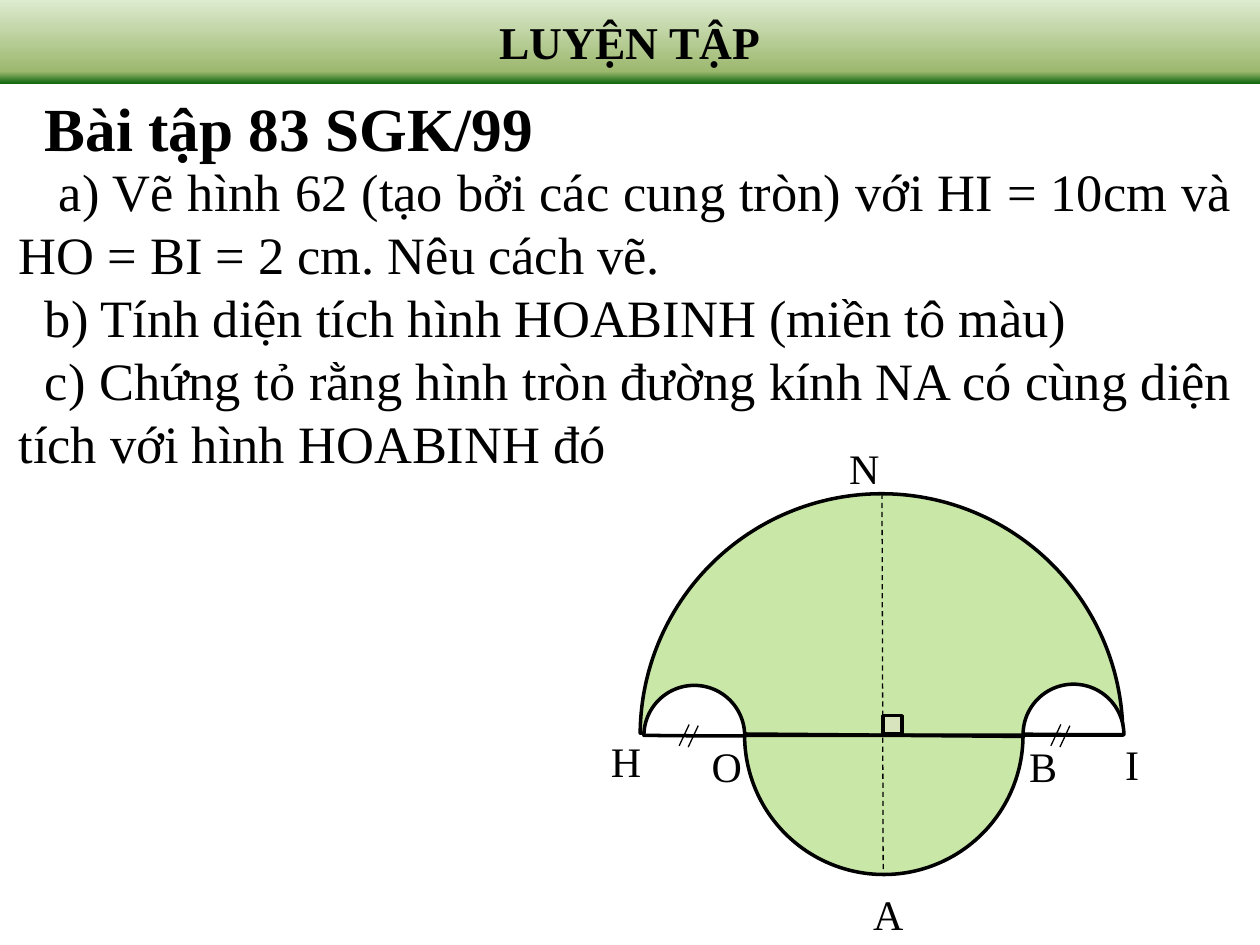
from copy import deepcopy
from dataclasses import dataclass

from pptx import Presentation
from pptx.dml.color import RGBColor
from pptx.enum.dml import MSO_LINE
from pptx.enum.shapes import MSO_CONNECTOR, MSO_SHAPE
from pptx.enum.text import MSO_ANCHOR, MSO_AUTO_SIZE, PP_ALIGN
from pptx.oxml.ns import qn
from pptx.oxml.xmlchemy import OxmlElement
from pptx.util import Pt

FONT = "Times New Roman"
BLACK, WHITE, GREEN, PALE = "000000", "FFFFFF", "C9E7A7", "D7E4BD"


@dataclass
class HalfDisc:
    left: float
    top: float
    size: float
    rotation: int
    fill: str


@dataclass
class Label:
    text: str
    left: float
    top: float


@dataclass
class Task:
    text: str
    indent: float


def color(value: str) -> RGBColor:
    return RGBColor.from_string(value)


def format_text(p, size: float, bold: bool = False, align=PP_ALIGN.LEFT,
                indent: float = 0) -> None:
    p.alignment = align
    if indent:
        p._p.get_or_add_pPr().set("indent", str(Pt(indent)))
    for r in p.runs:
        r.font.name, r.font.size, r.font.bold = FONT, Pt(size), bold
        r.font.color.rgb = color(BLACK)


def add_text(s, left: float, top: float, width: float, height: float,
             text: str, wrap: bool = True):
    tf = s.shapes.add_textbox(Pt(left), Pt(top), Pt(width), Pt(height)).text_frame
    tf.word_wrap = wrap
    tf.text = text
    return tf


def add_shape(s, kind, left: float, top: float, width: float, height: float,
              fill: str):
    sp = s.shapes.add_shape(kind, Pt(left), Pt(top), Pt(width), Pt(height))
    sp.shadow.inherit = False
    sp.fill.solid()
    sp.fill.fore_color.rgb = color(fill)
    sp.line.color.rgb = color(BLACK)
    sp.line.width = Pt(2)
    return sp


def add_half_disc(s, d: HalfDisc) -> None:
    sp = add_shape(s, MSO_SHAPE.PIE, d.left, d.top, d.size, d.size, d.fill)
    sp.adjustments[0], sp.adjustments[1] = 54.276, 162
    sp.rotation = d.rotation


def add_line(s, x1: float, y1: float, x2: float, y2: float, dash=None) -> None:
    line = s.shapes.add_connector(MSO_CONNECTOR.STRAIGHT, Pt(x1), Pt(y1), Pt(x2), Pt(y2))
    line.line.color.rgb = color(BLACK)
    line.line.width = Pt(0.75)
    if dash:
        line.line.dash_style = dash
    line._element.spPr.append(OxmlElement("a:effectLst"))


def add_header(s) -> None:
    sp = add_shape(s, MSO_SHAPE.RECTANGLE, 0, 0, 720, 47.5, WHITE)
    sp.line.fill.background()
    sp.fill.gradient()
    sp.fill.gradient_angle = 270
    gs_list = sp._element.spPr.find(".//" + qn("a:gsLst"))
    gs_list.append(deepcopy(gs_list[0]))
    stops = [(0, "DDEBCF"), (0.86, "9CB86E"), (1, "156B13")]
    for stop, (position, value) in zip(sp.fill.gradient_stops, stops):
        stop.position = position
        stop.color.rgb = color(value)
    tf = sp.text_frame
    tf.vertical_anchor = MSO_ANCHOR.MIDDLE
    tf.text = "LUYỆN TẬP"
    format_text(tf.paragraphs[0], 26, True, PP_ALIGN.CENTER)


TASKS = [
    Task("a) Vẽ hình 62 (tạo bởi các cung tròn) với HI = 10cm và "
         "HO = BI = 2 cm. Nêu cách vẽ.", 23),
    Task("b) Tính diện tích hình HOABINH (miền tô màu)", 15),
    Task("c) Chứng tỏ rằng hình tròn đường kính NA có cùng diện tích "
         "với hình HOABINH đó", 15),
]
HALF_DISCS = [
    HalfDisc(365.8, 282.2, 275.8, 90, GREEN),
    HalfDisc(367.9, 391.7, 57.6, 90, WHITE),
    HalfDisc(584.6, 391, 57.6, 90, WHITE),
    HalfDisc(425.5, 340.6, 159.1, 270, GREEN),
]
LABELS = [
    Label("A", 491.8, 504), Label("H", 342, 416.9), Label("I", 635.8, 418.3),
    Label("O", 399.6, 419.8), Label("N", 478.1, 249.1), Label("B", 581, 419.8),
]

prs = Presentation()
prs.slide_width, prs.slide_height = Pt(720), Pt(540)
s = prs.slides.add_slide(prs.slide_layouts[6])

# Exercise text
tf = add_text(s, 3.6, 87.1, 707.8, 189.4, "\n".join(t.text for t in TASKS))
tf.auto_size = MSO_AUTO_SIZE.SHAPE_TO_FIT_TEXT
for p, task in zip(tf.paragraphs, TASKS):
    format_text(p, 30, align=PP_ALIGN.JUSTIFY, indent=task.indent)

# Header band and exercise title
add_header(s)
tf = add_text(s, 9.4, 48.2, 344.9, 48.2, "Bài tập 83 SGK/99")
format_text(tf.paragraphs[0], 35, True, indent=9)

# Figure: arcs, axis NA and point names
for disc in HALF_DISCS:
    add_half_disc(s, disc)
add_line(s, 504, 282.2, 504.7, 499.7, MSO_LINE.DASH)
for label in LABELS:
    tf = add_text(s, label.left, label.top, 54, 36, label.text)
    tf.auto_size = MSO_AUTO_SIZE.SHAPE_TO_FIT_TEXT
    format_text(tf.paragraphs[0], 24)

# Equal-length ticks on HO and BI, right angle mark
for x in (393.8, 606.2):
    for dx, dy in ((0, 0), (5.2, 0.7)):
        add_line(s, x + dx, 414 + dy, x + dx - 5.7, 426.2 + dy)
add_shape(s, MSO_SHAPE.RECTANGLE, 504.7, 409, 10.8, 10.1, PALE)

prs.save("out.pptx")
